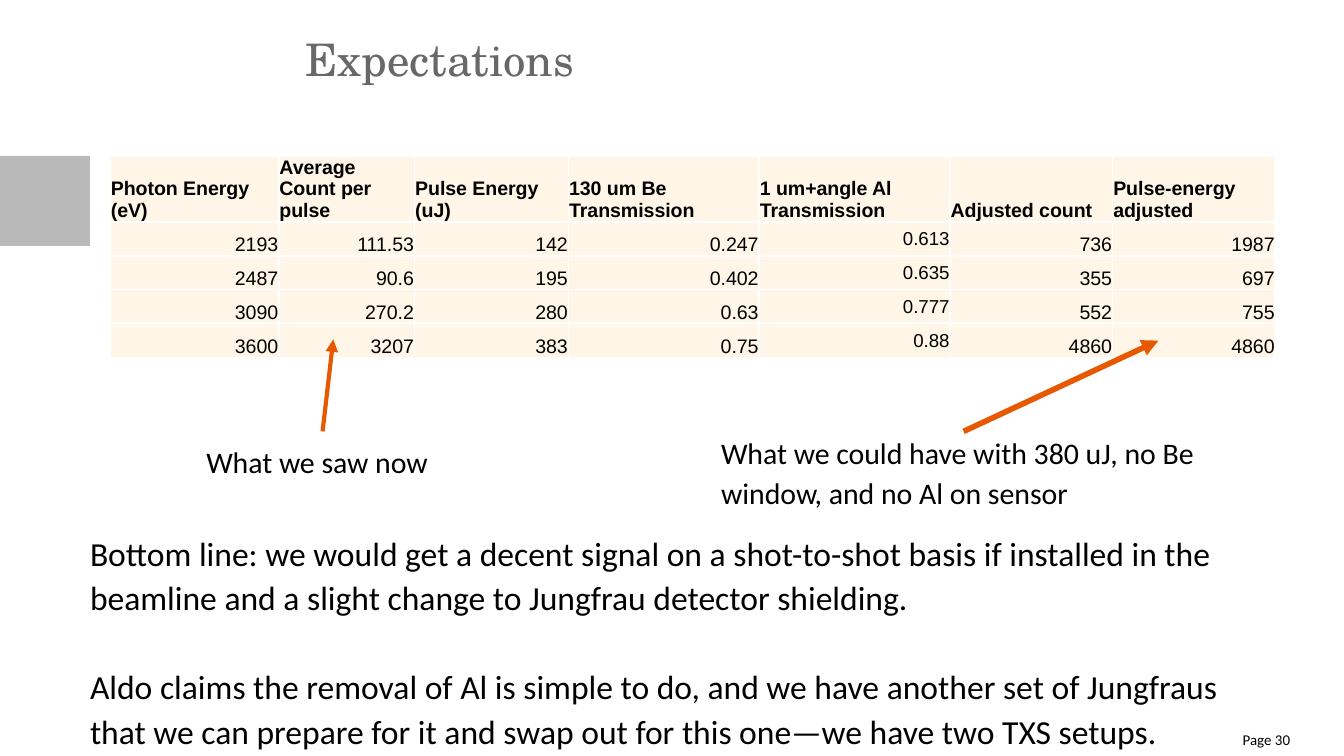
"""Build the Expectations slide with its table, arrows and notes."""
from dataclasses import dataclass
from typing import Any

from lxml.etree import SubElement as Sub
from pptx import Presentation as Deck
from pptx.dml.color import RGBColor as Color
from pptx.enum.shapes import MSO_CONNECTOR as Link, MSO_SHAPE as Form
from pptx.enum.text import MSO_ANCHOR as Anchor, PP_ALIGN as Align
from pptx.oxml.ns import qn
from pptx.util import Emu, Pt

SCALE = 4572


@dataclass(frozen=True)
class Theme:
    ink: str = "000000"
    title: str = "686868"
    block: str = "B9B9B9"
    cell: str = "FFF6E7"
    rule: str = "FFFFFF"
    arrow: str = "E65900"
    serif: str = "TeX Gyre Schola"
    sans: str = "Calibri"
    grid: str = "Arial"
    head: float = 24
    body: float = 18
    note: float = 16
    data: float = 10.5
    small: float = 10
    foot: float = 8


THEME = Theme()


@dataclass(frozen=True)
class Label:
    box: tuple[int, int, int, int]
    lines: tuple[str, ...]
    size: float
    face: str = THEME.sans
    color: str = THEME.ink
    align: Align = Align.LEFT
    pitch: float = 1.0
    gap: int = 0
    wrap: bool = True


@dataclass(frozen=True)
class Arrow:
    start: tuple[int, int]
    end: tuple[int, int]
    width: float


LABELS = (
    Label((454, 47, 1468, 84), ("Expectations",), THEME.head, THEME.serif, THEME.title),
    Label((1794, 1087, 126, 32), ("Page 30",), THEME.foot, align=Align.RIGHT),
    Label((307, 655, 394, 94), ("What we saw now",), THEME.note, pitch=1.1, wrap=False),
    Label((1073, 642, 722, 124),
          ("What we could have with 380 uJ, no Be window, and no Al on sensor",),
          THEME.note, pitch=1.1),
    Label((134, 787, 1748, 312),
          ("Bottom line: we would get a decent signal on a shot-to-shot basis if installed "
           "in the beamline and a slight change to Jungfrau detector shielding.",
           "Aldo claims the removal of Al is simple to do, and we have another set of Jungfraus "
           "that we can prepare for it and swap out for this one—we have two TXS setups."),
          THEME.body, pitch=1.1, gap=24),
)
ARROWS = (Arrow((480, 642), (496, 505), 2.25), Arrow((1434, 642), (1724, 507), 3))

WIDTHS = (251, 202, 229, 284, 284, 242, 242)
HEIGHTS = (72, 51, 50, 50, 51)
ANGLE = 4
ROWS = (
    ("Photon Energy (eV)", "Average Count per pulse", "Pulse Energy (uJ)",
     "130 um Be Transmission", "1 um+angle Al Transmission", "Adjusted count",
     "Pulse-energy adjusted"),
    ("2193", "111.53", "142", "0.247", "0.613", "736", "1987"),
    ("2487", "90.6", "195", "0.402", "0.635", "355", "697"),
    ("3090", "270.2", "280", "0.63", "0.777", "552", "755"),
    ("3600", "3207", "383", "0.75", "0.88", "4860", "4860"),
)


def px(count: int) -> Emu:
    return Emu(count * SCALE)


def style(para: Any, face: str, size: float, color: str, bold: bool = False) -> None:
    font = para.font
    font.name, font.size, font.bold = face, Pt(size), bold
    font.color.rgb = Color.from_string(color)


def add_label(slide: Any, label: Label) -> None:
    frame = slide.shapes.add_textbox(*map(px, label.box)).text_frame
    frame.word_wrap = label.wrap
    frame.margin_left = frame.margin_right = frame.margin_top = frame.margin_bottom = 0
    for index, text in enumerate(label.lines):
        para = frame.add_paragraph() if index else frame.paragraphs[0]
        para.text = text
        para.alignment, para.line_spacing = label.align, label.pitch
        if index:
            para.space_before = Pt(label.gap)
        style(para, label.face, label.size, label.color)


def add_block(slide: Any) -> None:
    block = slide.shapes.add_shape(Form.RECTANGLE, px(0), px(232), px(134), px(134))
    block.shadow.inherit = False
    block.fill.solid()
    block.fill.fore_color.rgb = Color.from_string(THEME.block)
    block.line.fill.background()


def fill_cell(cell: Any, text: str, head: bool, angle: bool) -> None:
    cell.margin_left = cell.margin_right = cell.margin_top = px(1)
    cell.margin_bottom = 0
    small = angle and not head
    cell.vertical_anchor = Anchor.MIDDLE if small else Anchor.BOTTOM
    props = cell._tc.get_or_add_tcPr()
    for side in ("a:lnL", "a:lnR", "a:lnT", "a:lnB"):
        edge = Sub(props, qn(side), w=str(Pt(1)))
        Sub(Sub(edge, qn("a:solidFill")), qn("a:srgbClr"), val=THEME.rule)
    cell.fill.solid()
    cell.fill.fore_color.rgb = Color.from_string(THEME.cell)
    para = cell.text_frame.paragraphs[0]
    para.text = text
    para.alignment = Align.LEFT if head else Align.RIGHT
    style(para, THEME.grid, THEME.small if small else THEME.data, THEME.ink, head)


def add_grid(slide: Any) -> None:
    size = px(sum(WIDTHS)), px(sum(HEIGHTS))
    table = slide.shapes.add_table(len(ROWS), len(WIDTHS), px(164), px(232), *size).table
    table.horz_banding = False
    for col, width in zip(table.columns, WIDTHS):
        col.width = px(width)
    for row, height in zip(table.rows, HEIGHTS):
        row.height = px(height)
    for i, texts in enumerate(ROWS):
        for j, text in enumerate(texts):
            fill_cell(table.cell(i, j), text, i == 0, j == ANGLE)


def add_arrow(slide: Any, arrow: Arrow) -> None:
    ends = map(px, arrow.start + arrow.end)
    link = slide.shapes.add_connector(Link.STRAIGHT, *ends)
    link.line.width = Pt(arrow.width)
    link.line.color.rgb = Color.from_string(THEME.arrow)
    Sub(link.line._get_or_add_ln(), qn("a:tailEnd"), type="triangle")
    Sub(link._element.spPr, qn("a:effectLst"))


def main() -> None:
    deck = Deck()
    deck.slide_width, deck.slide_height = px(2000), px(1125)
    slide = deck.slides.add_slide(deck.slide_layouts[6])
    add_block(slide)
    add_grid(slide)
    for label in LABELS:
        add_label(slide, label)
    for arrow in ARROWS:
        add_arrow(slide, arrow)
    deck.save("out.pptx")


if __name__ == "__main__":
    main()
